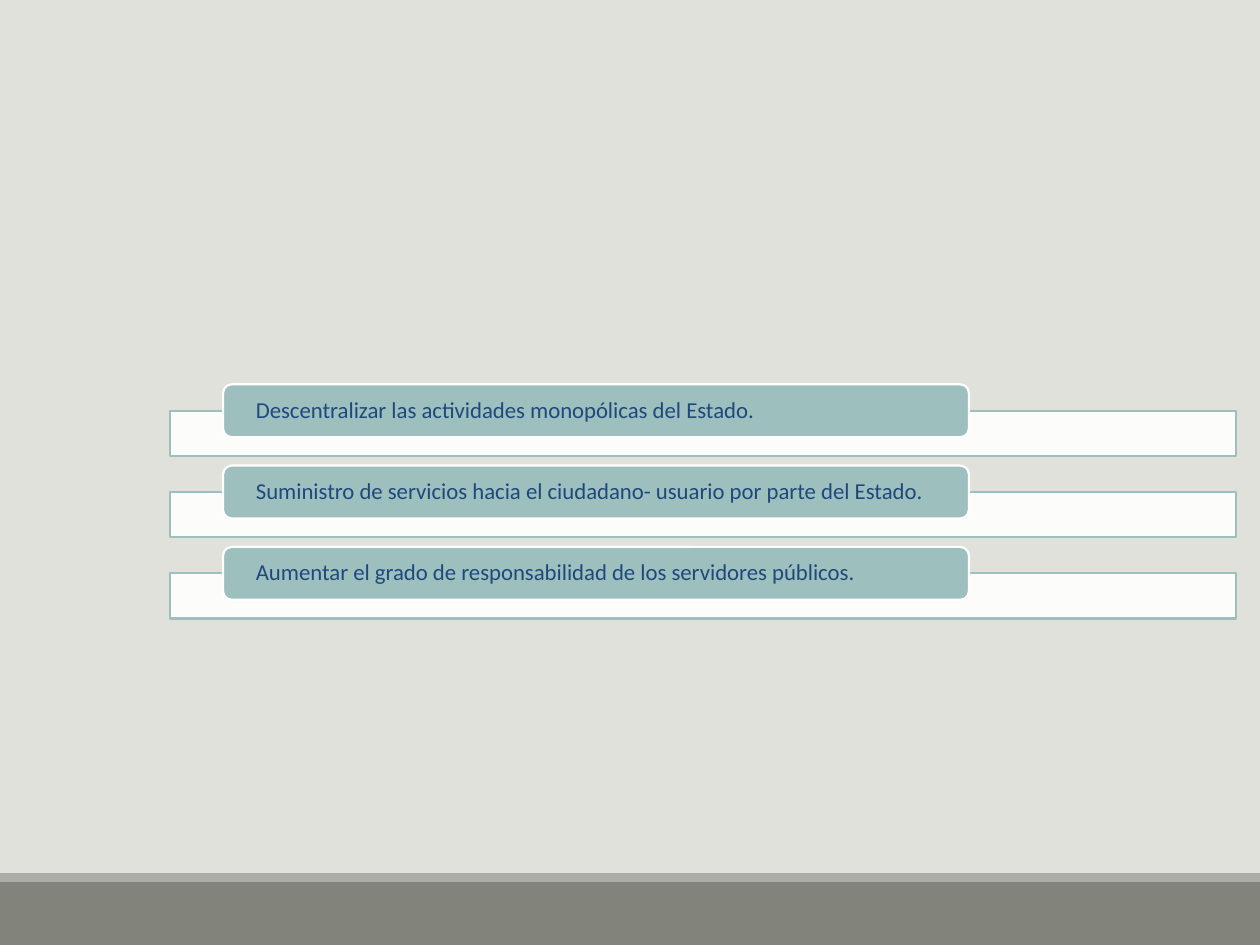
from pptx import Presentation
from pptx.dml.color import RGBColor
from pptx.enum.shapes import MSO_SHAPE as Shape
from pptx.enum.text import MSO_ANCHOR as Anchor, PP_ALIGN as Align
from pptx.oxml.xmlchemy import OxmlElement
from pptx.util import Inches, Pt

WIDTH, HEIGHT = 10, 7.5
BACKGROUND, FOOTER, FOOTER_EDGE = "E1E1DB", "82847C", "ACADA8"
WHITE, TEAL, NAVY = "FFFFFF", "9DBFBE", "1F497D"

GOALS = [
    "Descentralizar las actividades monopólicas del Estado.",
    "Suministro de servicios hacia el ciudadano- usuario por parte del Estado.",
    "Aumentar el grado de responsabilidad de los servidores públicos.",
]
FIRST_TOP, ROW_PITCH = 3.05, 0.645
BAR_DROP = 0.21  # how far each bar starts below the top of its label


def set_color(color_format, value):
    color_format.rgb = RGBColor.from_string(value)


def add_box(page, kind, left, top, width, height, fill, line=None):
    box = page.shapes.add_shape(
        kind, Inches(left), Inches(top), Inches(width), Inches(height))
    box.shadow.inherit = False
    box.fill.solid()
    set_color(box.fill.fore_color, fill)
    if line:
        set_color(box.line.color, line)
        box.line.width = Pt(1.25)
    else:
        box.line.fill.background()
    return box


def set_opacity(box, percent):
    color = box.fill._xPr.solidFill[0]
    alpha = OxmlElement("a:alpha")
    alpha.set("val", str(percent * 1000))
    color.append(alpha)


def write_label(box, text):
    frame = box.text_frame
    frame.text = text
    frame.word_wrap = True
    frame.vertical_anchor = Anchor.MIDDLE
    frame.margin_left = frame.margin_right = Inches(0.24)
    frame.margin_top = frame.margin_bottom = 0
    para = frame.paragraphs[0]
    para.alignment = Align.LEFT
    para.line_spacing = 0.9
    font = para.runs[0].font
    font.name, font.size = "Calibri", Pt(13)
    set_color(font.color, NAVY)


def add_goal(page, top, text):
    bar = add_box(page, Shape.RECTANGLE, 1.35, top + BAR_DROP, 8.46, 0.36,
                  WHITE, TEAL)
    set_opacity(bar, 90)
    label = add_box(page, Shape.ROUNDED_RECTANGLE, 1.77, top, 5.92, 0.42,
                    TEAL, WHITE)
    write_label(label, text)


def add_footer(page):
    add_box(page, Shape.RECTANGLE, 0, 7, WIDTH, 0.5, FOOTER)
    add_box(page, Shape.RECTANGLE, 0, 6.93, WIDTH, 0.07, FOOTER_EDGE)


def main():
    deck = Presentation()
    deck.slide_width, deck.slide_height = Inches(WIDTH), Inches(HEIGHT)
    page = deck.slides.add_slide(deck.slide_layouts[6])

    # Background and footer bands
    page.background.fill.solid()
    set_color(page.background.fill.fore_color, BACKGROUND)
    add_footer(page)

    # List of goals
    for row, text in enumerate(GOALS):
        add_goal(page, FIRST_TOP + row * ROW_PITCH, text)

    deck.save("out.pptx")


if __name__ == "__main__":
    main()
